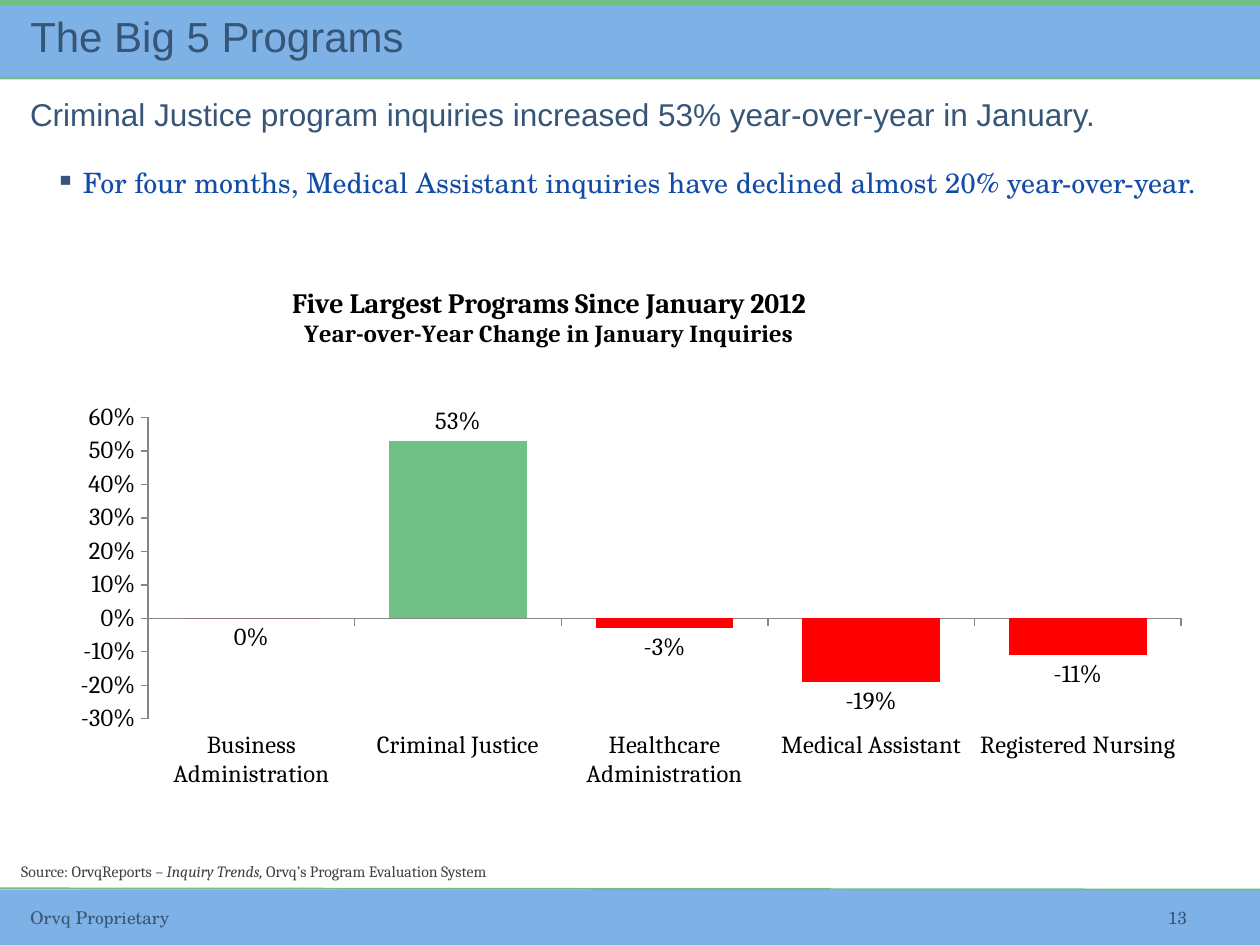
from lxml import etree
from pptx import Presentation
from pptx.chart.data import CategoryChartData
from pptx.dml.color import RGBColor
from pptx.enum.chart import (XL_CHART_TYPE, XL_LABEL_POSITION,
                             XL_TICK_LABEL_POSITION, XL_TICK_MARK)
from pptx.enum.shapes import MSO_CONNECTOR, MSO_SHAPE
from pptx.enum.text import MSO_ANCHOR, MSO_AUTO_SIZE, PP_ALIGN
from pptx.oxml import parse_xml
from pptx.oxml.ns import nsdecls, qn
from pptx.util import Inches, Pt

BLUE = RGBColor(0x7E, 0xB2, 0xE6)
GREEN = RGBColor(0x6F, 0xC0, 0x85)
BAR_GREEN = RGBColor(0x70, 0xC1, 0x85)
RED = RGBColor(0xFF, 0x00, 0x00)
SLATE = RGBColor(0x37, 0x55, 0x77)
ROYAL = RGBColor(0x12, 0x4C, 0xA6)
DARK = RGBColor(0x40, 0x40, 0x40)
AXIS_GRAY = RGBColor(0x86, 0x86, 0x86)
BLACK = RGBColor(0, 0, 0)
SANS, SERIF, BOOK = "Arial", "Cambria", "TeX Gyre Schola"
MIDDLE, TOP = MSO_ANCHOR.MIDDLE, MSO_ANCHOR.TOP
CENTER, LEFT = PP_ALIGN.CENTER, PP_ALIGN.LEFT
COLUMN = XL_CHART_TYPE.COLUMN_CLUSTERED
OUTSIDE, INSIDE = XL_LABEL_POSITION.OUTSIDE_END, XL_LABEL_POSITION.INSIDE_END

PROGRAMS = {
    "Business Administration": 0,
    "Criminal Justice": 0.53,
    "Healthcare Administration": -0.03,
    "Medical Assistant": -0.19,
    "Registered Nursing": -0.11,
}


def style(font, name, size, color):
    font.name, font.size = name, Pt(size)
    font.color.rgb = color


def add_band(slide, box, color):
    s = slide.shapes.add_shape(MSO_SHAPE.RECTANGLE, *map(Inches, box))
    s.shadow.inherit = False
    s.fill.solid()
    s.fill.fore_color.rgb = color
    s.line.fill.background()


def add_rule(slide, y1, y2):
    line = slide.shapes.add_connector(MSO_CONNECTOR.STRAIGHT, Inches(0), Inches(y1),
                                      Inches(10), Inches(y2))
    line.line.color.rgb, line.line.width = GREEN, Pt(1)
    etree.SubElement(line._element.spPr, qn("a:effectLst"))


def add_text(slide, box, runs, font, anchor=TOP, align=LEFT, spacing=None, wrap=True):
    """Add one paragraph; runs are (text, italic) pairs, font is (name, size, color)."""
    s = slide.shapes.add_textbox(*map(Inches, box))
    tf = s.text_frame
    tf.word_wrap, tf.vertical_anchor = wrap, anchor
    p = tf.paragraphs[0]
    p.alignment, p.line_spacing = align, spacing
    for text, italic in runs:
        r = p.add_run()
        r.text = text
        style(r.font, *font)
        r.font.italic = italic
    return tf


def add_header(slide, box):
    x, y, w, h = box
    add_band(slide, (x, y + 0.04, w, h - 0.03), BLUE)
    add_band(slide, (x, y - 0.01, w, 0.05), GREEN)
    add_rule(slide, y + h, y + h)
    # Title placeholder, brought in front of the bands
    title = slide.shapes.title
    title.left, title.top, title.width, title.height = map(Inches, (x + 0.14, y, 6.11, h))
    slide.shapes._spTree.append(title._element)
    tf = title.text_frame
    tf.word_wrap, tf.vertical_anchor = True, MIDDLE
    tf.auto_size = MSO_AUTO_SIZE.NONE
    p = tf.paragraphs[0]
    p.alignment, p.line_spacing = LEFT, 0.89
    r = p.add_run()
    r.text = "The Big 5 Programs"
    style(r.font, SANS, 24, SLATE)


def add_messages(slide, box):
    x, y, w, h = box
    add_text(slide, (x, y, w, 0.44),
             [("Criminal Justice program inquiries increased 53% year-over-year in January.",
               None)], (SANS, 18, SLATE), spacing=0.94)
    tf = add_text(slide, (x, y + 0.56, w, h - 0.56),
                  [("For four months, Medical Assistant inquiries have declined "
                    "almost 20% year-over-year.", None)], (BOOK, 16, ROYAL), spacing=0.94)
    # Square bullet with a hanging indent
    pPr = tf.paragraphs[0]._p.get_or_add_pPr()
    pPr.set("marL", str(Inches(0.42)))
    pPr.set("indent", str(Inches(-0.22)))
    color = etree.SubElement(pPr, qn("a:buClr"))
    etree.SubElement(color, qn("a:srgbClr"), val=str(SLATE))
    etree.SubElement(pPr, qn("a:buChar"), char="▪")


def manual_layout(x, y, w=None, h=None):
    tags = [("layoutTarget", "inner")] if w else []
    tags += [("xMode", "edge"), ("yMode", "edge"), ("x", x), ("y", y)]
    tags += [("w", w), ("h", h)] if w else []
    body = "".join(f'<c:{tag} val="{val}"/>' for tag, val in tags)
    return parse_xml(f'<c:layout {nsdecls("c")}><c:manualLayout>{body}'
                     '</c:manualLayout></c:layout>')


def set_layout(parent, layout, index):
    for old in parent.findall(qn("c:layout")):
        parent.remove(old)
    parent.insert(index, layout)


def add_program_chart(slide, box):
    data = CategoryChartData(number_format="0%")
    data.categories = list(PROGRAMS)
    data.add_series("Series 1", list(PROGRAMS.values()))
    chart = slide.shapes.add_chart(COLUMN, *map(Inches, box), data).chart
    chart.has_legend = False
    style(chart.font, SERIF, 14, BLACK)

    # Two-line title
    chart.has_title = True
    tf = chart.chart_title.text_frame
    lines = [("Five Largest Programs Since January 2012", 16),
             ("Year-over-Year Change in January Inquiries", 14)]
    for i, (text, size) in enumerate(lines):
        p = tf.add_paragraph() if i else tf.paragraphs[0]
        r = p.add_run()
        r.text = text
        style(r.font, SERIF, size, BLACK)
        r.font.bold = True
    chart.chart_title.include_in_layout = False
    set_layout(chart.chart_title._element, manual_layout(0.2, 0.03), 1)
    set_layout(chart._chartSpace.chart.plotArea,
               manual_layout(0.077, 0.275, 0.907, 0.546), 0)

    # Axes
    for axis in (chart.category_axis, chart.value_axis):
        axis.has_major_gridlines = False
        axis.major_tick_mark = XL_TICK_MARK.OUTSIDE
        axis.minor_tick_mark = XL_TICK_MARK.NONE
        axis.format.line.color.rgb = AXIS_GRAY
        axis.format.line.width = Pt(0.75)
    chart.category_axis.tick_label_position = XL_TICK_LABEL_POSITION.LOW
    values = chart.value_axis
    values.minimum_scale, values.maximum_scale, values.major_unit = -0.3, 0.6, 0.1
    values.tick_labels.number_format = "0%"
    values.tick_labels.number_format_is_linked = False

    # Columns: green for growth, red otherwise
    plot = chart.plots[0]
    plot.gap_width, plot.vary_by_categories = 50, False
    series = plot.series[0]
    series.invert_if_negative = False
    series.format.fill.solid()
    series.format.fill.fore_color.rgb = BAR_GREEN
    labels = series.data_labels
    labels.show_value, labels.position = True, OUTSIDE
    labels.number_format, labels.number_format_is_linked = "0%", False
    style(labels.font, SERIF, 14, BLACK)
    for i, value in enumerate(PROGRAMS.values()):
        if value <= 0:
            fill = series.points[i].format.fill
            fill.solid()
            fill.fore_color.rgb = RED
        if value == 0:  # keep the label under the axis
            label = series.points[i].data_label
            style(label.font, SERIF, 14, BLACK)
            label.position = INSIDE


def add_footer(slide, box):
    x, y, w, h = box
    add_band(slide, box, BLUE)
    add_rule(slide, y - 0.01, y)
    small = (BOOK, 10, SLATE)
    add_text(slide, (x + 0.14, y, 2.37, h), [("Orvq Proprietary", None)], small, MIDDLE)
    add_text(slide, (x + w - 1.31, y, 1.31, h), [("13", None)], small, MIDDLE, CENTER)
    add_text(slide, (x + 0.07, y - 0.27, 4.38, 0.25),
             [("Source: OrvqReports – ", None), ("Inquiry Trends, ", True),
              ("Orvq’s Program Evaluation System", None)], (SERIF, 9, DARK), wrap=False)


def main():
    prs = Presentation()
    prs.slide_width, prs.slide_height = Inches(10), Inches(7.5)
    slide = prs.slides.add_slide(prs.slide_layouts[5])
    add_header(slide, (0, 0, 10, 0.62))
    add_messages(slide, (0.14, 0.73, 9.76, 1.3))
    add_program_chart(slide, (0.48, 2.11, 9.04, 4.38))
    add_footer(slide, (0, 7.06, 10, 0.44))
    prs.save("out.pptx")


if __name__ == "__main__":
    main()
